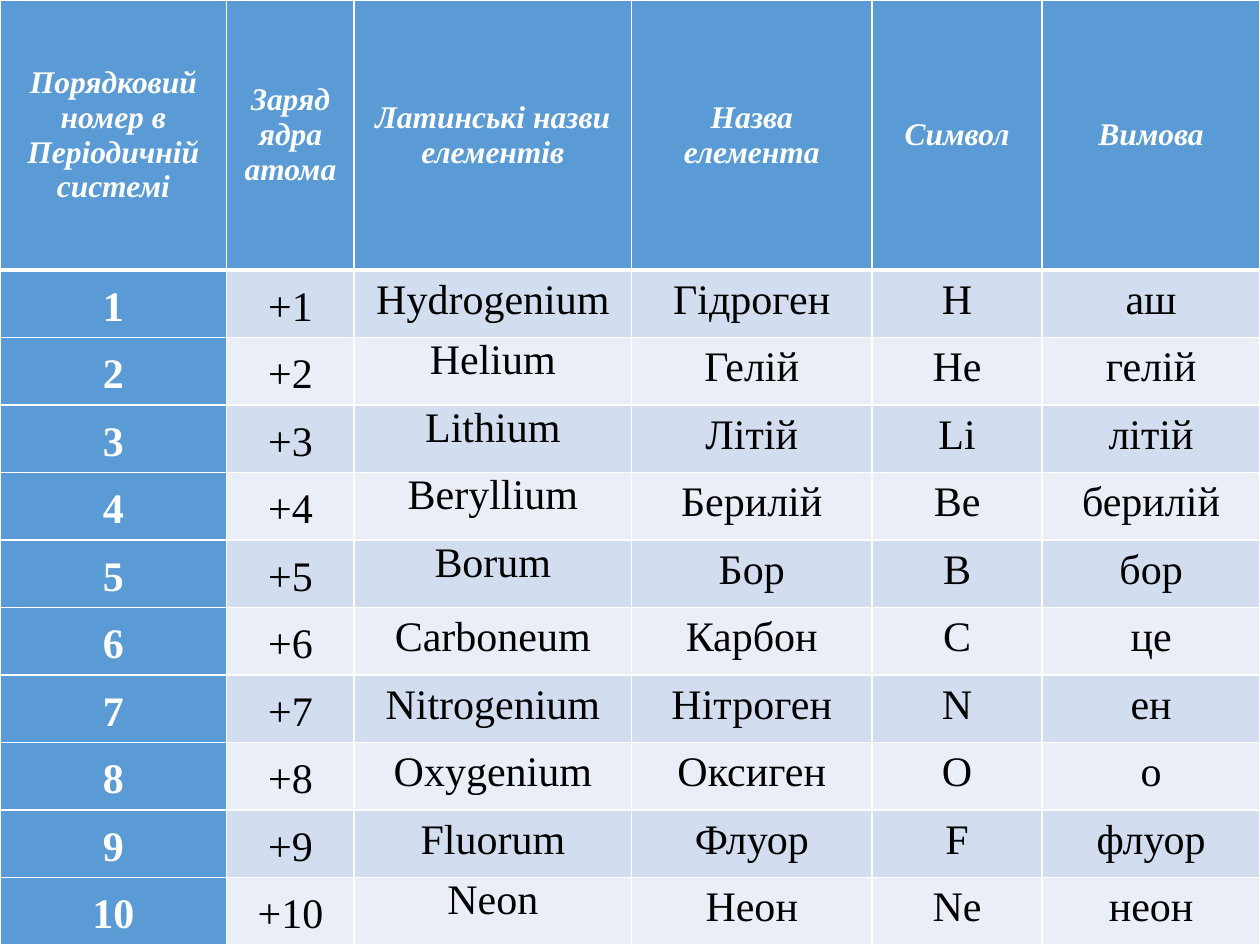
from lxml.etree import SubElement
from pptx import Presentation
from pptx.dml.color import RGBColor
from pptx.enum.text import MSO_ANCHOR as Anchor, PP_ALIGN as Align
from pptx.oxml.ns import qn
from pptx.util import Cm, Pt

COLORS = {
    "accent": "5B9BD5",
    "odd_band": "D2DEEF",
    "even_band": "EAEFF7",
    "light": "FFFFFF",
    "dark": "000000",
}
FONT = "Times New Roman"
SLIDE_WIDTH, SLIDE_HEIGHT = 25.4, 19.05
HEADER_HEIGHT = 5.44
COLUMN_WIDTHS = [4.57, 2.57, 5.59, 4.85, 3.43, 4.39]
HEADERS = [
    "Порядковий номер в Періодичній системі",
    "Заряд ядра\nатома",
    "Латинські назви елементів",
    "Назва елемента",
    "Символ",
    "Вимова",
]
ELEMENTS = [
    ("Hydrogenium", "Гідроген", "H", "аш"),
    ("Helium", "Гелій", "He", "гелій"),
    ("Lithium", "Літій", "Li", "літій"),
    ("Beryllium", "Берилій", "Be", "берилій"),
    ("Borum", "Бор", "B", "бор"),
    ("Carboneum", "Карбон", "C", "це"),
    ("Nitrogenium", "Нітроген", "N", "ен"),
    ("Oxygenium", "Оксиген", "O", "о"),
    ("Fluorum", "Флуор", "F", "флуор"),
    ("Neon", "Неон", "Ne", "неон"),
]
SINGLE_SPACED = {"Helium", "Lithium", "Beryllium", "Borum", "Neon"}
CELL_FORMAT = {
    "margin_left": Cm(0.18),
    "margin_right": Cm(0.18),
    "margin_top": 0,
    "margin_bottom": 0,
}
HEADER_FONT = {"name": FONT, "size": Pt(18), "bold": True, "italic": True}
NUMBER_FONT = {"name": FONT, "size": Pt(24), "bold": True, "italic": False}
BODY_FONT = {**NUMBER_FONT, "bold": False}


def rgb(color):
    return RGBColor.from_string(COLORS[color])


def apply_format(target, values):
    for name, value in values.items():
        setattr(target, name, value)


def set_borders(cell, top=1, bottom=1):
    properties = cell._tc.get_or_add_tcPr()
    for side, width in {"L": 1, "R": 1, "T": top, "B": bottom}.items():
        line = SubElement(properties, qn(f"a:ln{side}"), w=str(Pt(width)))
        fill = SubElement(line, qn("a:solidFill"))
        SubElement(fill, qn("a:srgbClr"), val=COLORS["light"])


def fill_cell(cell, text, font, fill, color, anchor, spacing=None):
    apply_format(cell, {**CELL_FORMAT, "vertical_anchor": anchor})
    cell.fill.solid()
    cell.fill.fore_color.rgb = rgb(fill)
    cell.text = text
    for paragraph in cell.text_frame.paragraphs:
        apply_format(paragraph, {"alignment": Align.CENTER, "line_spacing": spacing})
        for run in paragraph.runs:
            apply_format(run.font, font)
            run.font.color.rgb = rgb(color)


def add_header(table):
    for column, text in enumerate(HEADERS):
        cell = table.cell(0, column)
        set_borders(cell, bottom=3)
        fill_cell(cell, text, HEADER_FONT, "accent", "light", Anchor.MIDDLE)


def add_element(table, number, names):
    band = "odd_band" if number % 2 else "even_band"
    for column, text in enumerate((str(number), f"+{number}", *names)):
        cell = table.cell(number, column)
        set_borders(cell, top=3 if number == 1 else 1)
        anchor = Anchor.MIDDLE if column < 2 else Anchor.TOP
        spacing = None if text in SINGLE_SPACED else 1.15
        if column == 0:
            fill_cell(cell, text, NUMBER_FONT, "accent", "light", anchor, spacing)
        else:
            fill_cell(cell, text, BODY_FONT, band, "dark", anchor, spacing)


def add_element_table(slide):
    table = slide.shapes.add_table(
        len(ELEMENTS) + 1, len(HEADERS), 0, 0, Cm(SLIDE_WIDTH), Cm(SLIDE_HEIGHT)
    ).table
    table.first_col = True
    for column, width in zip(table.columns, COLUMN_WIDTHS):
        column.width = Cm(width)
    element_height = (SLIDE_HEIGHT - HEADER_HEIGHT) / len(ELEMENTS)
    for index, row in enumerate(table.rows):
        row.height = Cm(element_height if index else HEADER_HEIGHT)
    add_header(table)
    for number, names in enumerate(ELEMENTS, start=1):
        add_element(table, number, names)


def main():
    presentation = Presentation()
    presentation.slide_width = Cm(SLIDE_WIDTH)
    presentation.slide_height = Cm(SLIDE_HEIGHT)
    slide = presentation.slides.add_slide(presentation.slide_layouts[6])
    add_element_table(slide)
    presentation.save("out.pptx")


if __name__ == "__main__":
    main()
